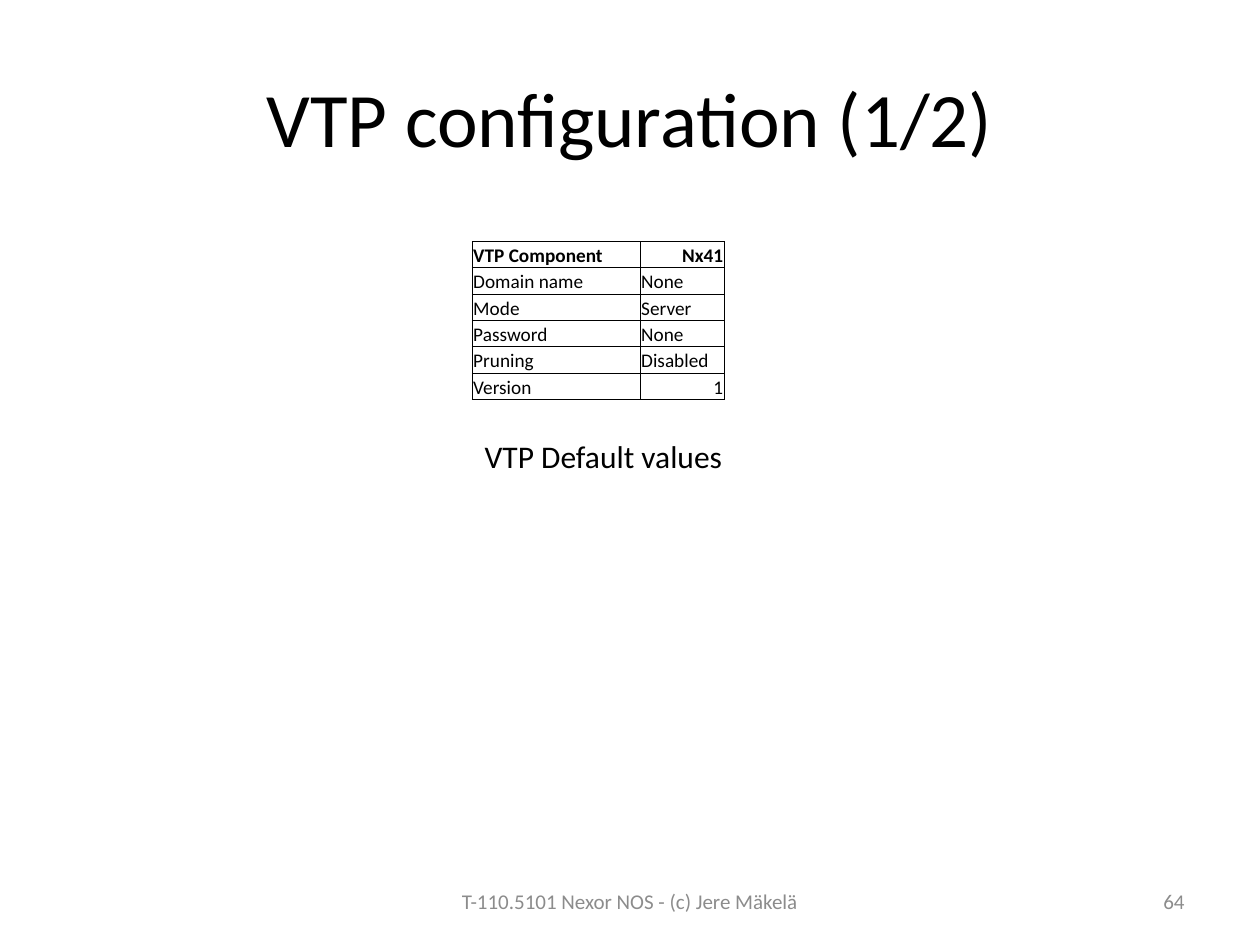
from lxml import etree
from pptx import Presentation
from pptx import util as u
from pptx.dml.color import RGBColor
from pptx.enum import text
from pptx.oxml.ns import qn

FONT = "Calibri"
BLACK = "000000"
GREY = "8C8C8C"
LEFT, CENTER, RIGHT = text.PP_ALIGN.LEFT, text.PP_ALIGN.CENTER, text.PP_ALIGN.RIGHT
MIDDLE = text.MSO_ANCHOR.MIDDLE
DEFAULTS = [
    ("VTP Component", "Nx41"),
    ("Domain name", "None"),
    ("Mode", "Server"),
    ("Password", "None"),
    ("Pruning", "Disabled"),
    ("Version", "1"),
]
MERGED_ROWS = 2


def rgb(color):
    """Return the colour for a hex string."""
    return RGBColor.from_string(color)


def write(tf, content, size=18, color=BLACK, bold=False, align=LEFT):
    """Put one formatted line into a text frame."""
    p = tf.paragraphs[0]
    p.alignment = align
    if not content:
        etree.SubElement(p._p, qn("a:endParaRPr"), sz=str(size * 100))
        return
    r = p.add_run()
    r.text = content
    r.font.name = FONT
    r.font.size = u.Pt(size)
    r.font.bold = bold
    r.font.color.rgb = rgb(color)


def add_title(slide, content):
    """Place and fill the title placeholder."""
    sp = slide.shapes.title
    sp.left, sp.top, sp.width, sp.height = u.Cm(1.27), u.Cm(0.76), u.Cm(22.86), u.Cm(3.18)
    sp.text_frame.vertical_anchor = MIDDLE
    write(sp.text_frame, content, size=44, align=CENTER)


def add_label(slide, content, left, top, width, wrap=True, anchor=MIDDLE, **style):
    """Add a one-line text box."""
    sp = slide.shapes.add_textbox(u.Cm(left), u.Cm(top), u.Cm(width), u.Cm(1.02))
    tf = sp.text_frame
    tf.word_wrap = wrap
    tf.vertical_anchor = anchor
    write(tf, content, **style)


def set_borders(cell, sides):
    """Draw thin black lines on the given sides of a cell and none elsewhere."""
    tc_pr = cell._tc.get_or_add_tcPr()
    for side in "LRTB":
        ln = etree.SubElement(tc_pr, qn(f"a:ln{side}"), w=str(u.Pt(0.5)))
        if side in sides:
            fill = etree.SubElement(ln, qn("a:solidFill"))
            etree.SubElement(fill, qn("a:srgbClr"), val=BLACK)
        else:
            etree.SubElement(ln, qn("a:noFill"))


def fill_cell(cell, content, sides, **style):
    """Format one table cell."""
    cell.margin_left = cell.margin_right = cell.margin_top = u.Cm(0.02)
    cell.margin_bottom = 0
    cell.vertical_anchor = text.MSO_ANCHOR.BOTTOM
    write(cell.text_frame, content, size=11, **style)
    set_borders(cell, sides)
    cell.fill.background()


def add_defaults_table(slide):
    """Add the table of default values, its names spanning two columns."""
    sp = slide.shapes.add_table(len(DEFAULTS), 3, u.Cm(9.52), u.Cm(4.87), u.Cm(5.08), u.Cm(3.18))
    table = sp.table
    table.first_row = table.horz_banding = False
    for i, (name, value) in enumerate(DEFAULTS):
        merged = i < MERGED_ROWS
        if merged:
            table.cell(i, 0).merge(table.cell(i, 1))
        header = i == 0
        fill_cell(table.cell(i, 0), name, "LRTB" if merged else "LTB", bold=header)
        fill_cell(table.cell(i, 1), "", "RTB")
        align = RIGHT if header or value.isdigit() else LEFT
        fill_cell(table.cell(i, 2), value, "LRTB", bold=header, align=align)


def main():
    """Build the slide and save it."""
    prs = Presentation()
    prs.slide_width, prs.slide_height = u.Cm(25.4), u.Cm(19.05)
    slide = prs.slides.add_slide(prs.slide_layouts[5])
    add_title(slide, "VTP configuration (1/2)")
    add_label(slide, "64", 18.2, 17.65, 5.93, size=12, color=GREY, align=RIGHT)
    add_defaults_table(slide)
    add_label(slide, "VTP Default values", 9.52, 8.69, 5.36, wrap=False,
              anchor=text.MSO_ANCHOR.TOP)
    add_label(slide, "T-110.5101 Nexor NOS - (c) Jere Mäkelä", 8.68, 17.65, 8.04,
              size=12, color=GREY, align=CENTER)
    prs.save("out.pptx")


if __name__ == "__main__":
    main()
